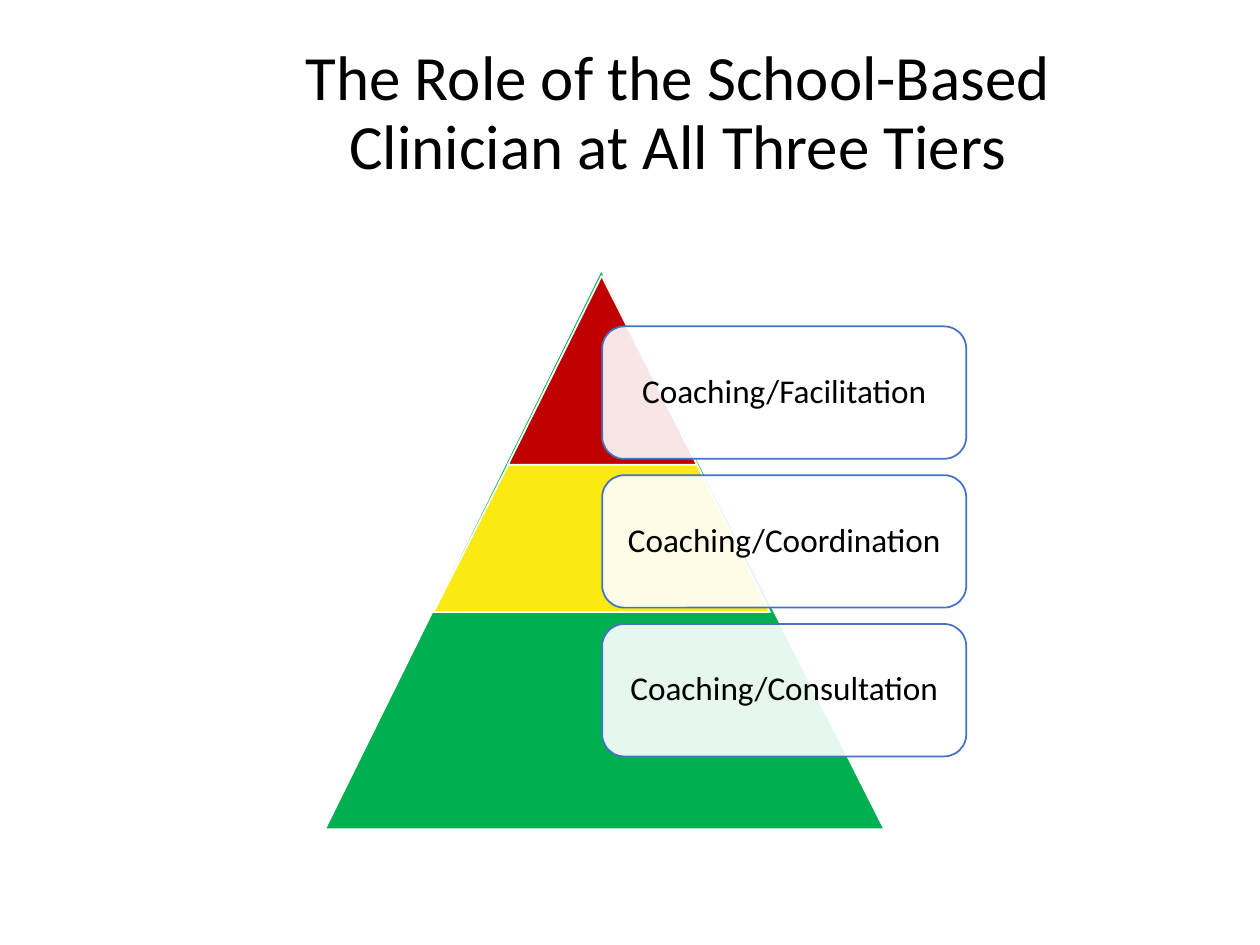
from dataclasses import dataclass

from lxml.etree import SubElement
from pptx import Presentation
from pptx.dml.color import RGBColor
from pptx.enum.shapes import MSO_SHAPE as Preset
from pptx.enum.text import MSO_ANCHOR as Anchor, MSO_AUTO_SIZE as AutoSize, PP_ALIGN as Align
from pptx.oxml.ns import qn
from pptx.util import Cm, Pt


@dataclass(frozen=True)
class Theme:
    font: str = "Calibri"
    title_size: int = 36
    label_size: int = 19
    text: str = "000000"
    white: str = "FFFFFF"
    card_line: str = "4472C4"
    green: str = "00B050"
    yellow: str = "FBEA11"
    red: str = "C00000"
    card_opacity: int = 90


@dataclass(frozen=True)
class Tier:
    label: str
    color: str
    left: float
    top: float
    side: float
    apex: float


THEME = Theme()
TIERS = [
    Tier("Coaching/Consultation", THEME.green, 6.55, 5.44, 11.28, 0.494),
    Tier("Coaching/Coordination", THEME.yellow, 8.74, 5.56, 6.78, 0.507),
    Tier("Coaching/Facilitation", THEME.red, 10.24, 5.56, 3.81, 0.496),
]
CARD_LEFT, CARD_TOP = 12.14, 6.58
CARD_WIDTH, CARD_HEIGHT, CARD_PITCH = 7.34, 2.67, 3.0


def write_text(shape, text: str, *, size: int, margin: float) -> None:
    frame = shape.text_frame
    frame.word_wrap = True
    frame.auto_size = AutoSize.NONE
    frame.vertical_anchor = Anchor.MIDDLE
    frame.margin_left = frame.margin_right = Cm(margin)
    frame.margin_top = frame.margin_bottom = Cm(margin)
    paragraph = frame.paragraphs[0]
    paragraph.alignment = Align.CENTER
    paragraph.line_spacing = 0.9
    run = paragraph.add_run()
    run.text = text
    run.font.name = THEME.font
    run.font.size = Pt(size)
    run.font.color.rgb = RGBColor.from_string(THEME.text)


def add_shape(slide, preset: Preset, left: float, top: float, width: float,
              height: float, fill: str, line: str):
    shape = slide.shapes.add_shape(preset, Cm(left), Cm(top), Cm(width), Cm(height))
    shape.shadow.inherit = False
    shape.fill.solid()
    shape.fill.fore_color.rgb = RGBColor.from_string(fill)
    shape.line.color.rgb = RGBColor.from_string(line)
    shape.line.width = Pt(1)
    return shape


def add_triangle(slide, tier: Tier) -> None:
    triangle = add_shape(slide, Preset.ISOSCELES_TRIANGLE, tier.left, tier.top,
                         tier.side, tier.side, tier.color, THEME.white)
    triangle.adjustments[0] = tier.apex


def add_card(slide, label: str, top: float) -> None:
    card = add_shape(slide, Preset.ROUNDED_RECTANGLE, CARD_LEFT, top,
                     CARD_WIDTH, CARD_HEIGHT, THEME.white, THEME.card_line)
    color = card._element.spPr.find(qn("a:solidFill")).find(qn("a:srgbClr"))
    SubElement(color, qn("a:alpha")).set("val", str(THEME.card_opacity * 1000))
    write_text(card, label, size=THEME.label_size, margin=0.33)


def add_title(slide, text: str) -> None:
    title = slide.shapes.title
    title.left, title.top = Cm(3.96), Cm(1.04)
    title.width, title.height = Cm(19.41), Cm(2.54)
    write_text(title, text, size=THEME.title_size, margin=0.2)


def main() -> None:
    presentation = Presentation()
    presentation.slide_width, presentation.slide_height = Cm(25.4), Cm(19.05)
    slide = presentation.slides.add_slide(presentation.slide_layouts[5])
    add_title(slide, "The Role of the School-Based Clinician at All Three Tiers")
    for tier in TIERS:
        add_triangle(slide, tier)
    for row, tier in enumerate(reversed(TIERS)):
        add_card(slide, tier.label, CARD_TOP + row * CARD_PITCH)
    presentation.save("out.pptx")


if __name__ == "__main__":
    main()
